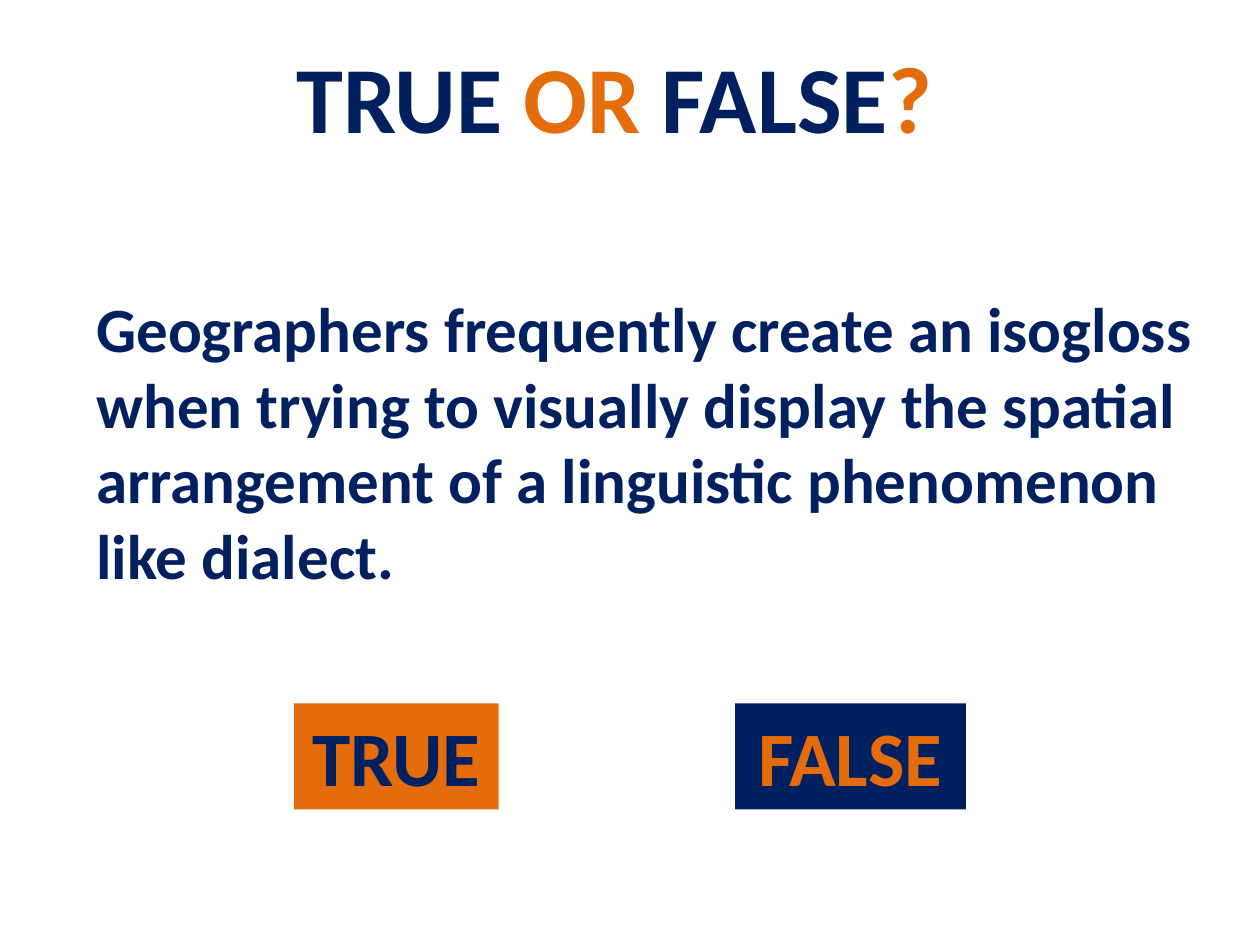
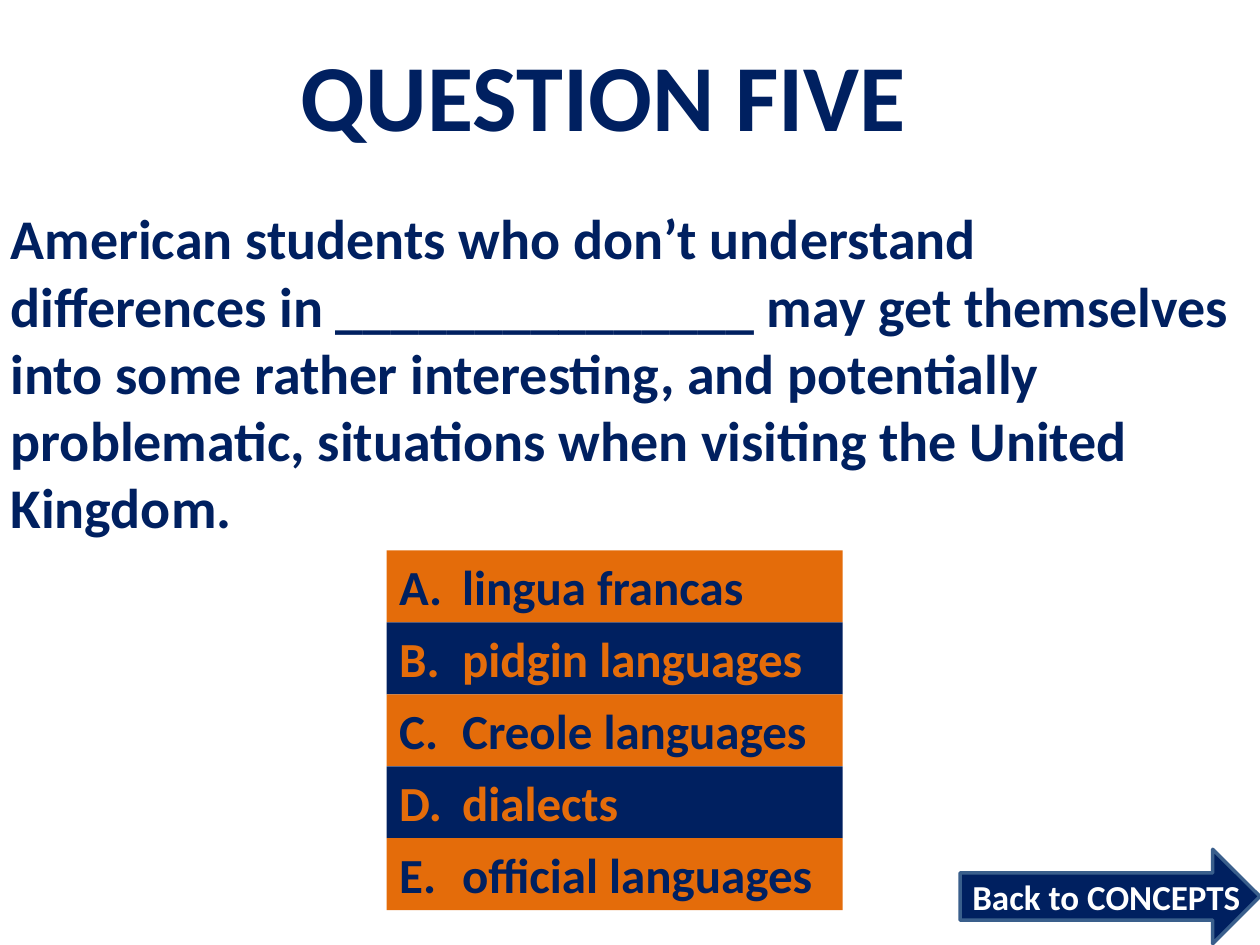
from pptx import Presentation
from pptx.dml.color import RGBColor
from pptx.enum.shapes import MSO_SHAPE
from pptx.enum.text import MSO_ANCHOR, PP_ALIGN
from pptx.util import Pt

RECTANGLE = MSO_SHAPE.RECTANGLE
SNIPPED_RECTANGLE = MSO_SHAPE.SNIP_2_SAME_RECTANGLE
RIGHT_ARROW = MSO_SHAPE.RIGHT_ARROW
LEFT, CENTER = PP_ALIGN.LEFT, PP_ALIGN.CENTER
TOP = MSO_ANCHOR.TOP

NAVY = RGBColor(0x00, 0x20, 0x60)
ORANGE = RGBColor(0xE4, 0x6C, 0x0A)
STEEL = RGBColor(0x3A, 0x5F, 0x8C)
WHITE = RGBColor(0xFF, 0xFF, 0xFF)
FONT = "Calibri"

ANSWERS = ["lingua francas", "pidgin languages", "Creole languages",
           "dialects", "official languages"]
ANSWER_LEFT, ANSWER_TOP = 221, 314.6
ANSWER_WIDTH, ANSWER_HEIGHT = 260.6, 41.1
ANSWER_INDENT = 36


def write(shape, runs, size, align=LEFT):
    """Fill a shape with one bold paragraph of (text, colour) runs."""
    frame = shape.text_frame
    frame.word_wrap = True
    frame.vertical_anchor = TOP
    paragraph = frame.paragraphs[0]
    paragraph.alignment = align
    for text, color in runs:
        run = paragraph.add_run()
        run.text = text
        run.font.name = FONT
        run.font.size = Pt(size)
        run.font.bold = True
        run.font.color.rgb = color
    return paragraph


def add_shape(slide, kind, box, fill=None):
    shape = slide.shapes.add_shape(kind, *map(Pt, box))
    shape.shadow.inherit = False
    shape.line.fill.background()
    if fill is None:
        shape.fill.background()
    else:
        shape.fill.solid()
        shape.fill.fore_color.rgb = fill
    return shape


def add_title(slide, box, runs):
    write(add_shape(slide, SNIPPED_RECTANGLE, box), runs, 54, CENTER)


def add_text(slide, box, text, size, color=NAVY):
    write(slide.shapes.add_textbox(*map(Pt, box)), [(text, color)], size)


def add_button(slide, box, text, fill, color):
    write(add_shape(slide, RECTANGLE, box, fill), [(text, color)], 44, CENTER)


def add_answers(slide):
    """Stack the lettered answers in alternating colours."""
    for row, answer in enumerate(ANSWERS):
        fill, color = (NAVY, ORANGE) if row % 2 else (ORANGE, NAVY)
        box = (ANSWER_LEFT, ANSWER_TOP + row * ANSWER_HEIGHT,
               ANSWER_WIDTH, ANSWER_HEIGHT)
        line = write(add_shape(slide, RECTANGLE, box, fill),
                     [(f"{'ABCDE'[row]}.\t{answer}", color)], 28)
        properties = line._p.get_or_add_pPr()
        properties.set("marL", str(Pt(ANSWER_INDENT)))
        properties.set("indent", str(-Pt(ANSWER_INDENT)))


def add_back_arrow(slide):
    arrow = add_shape(slide, RIGHT_ARROW, (548.6, 485.3, 171.4, 54), NAVY)
    arrow.line.color.rgb = STEEL
    arrow.line.width = Pt(2)
    add_text(slide, (548.6, 496.8, 177, 31.5), "Back to CONCEPTS", 20, WHITE)


def build_true_or_false(slide):
    add_text(slide, (48, 162, 642, 181.5),
             "Geographers frequently create an isogloss when trying to "
             "visually display the spatial arrangement of a linguistic "
             "phenomenon like dialect.", 36)
    add_title(slide, (150, 12, 402, 79),
              [("TRUE ", NAVY), ("OR ", ORANGE), ("FALSE", NAVY), ("?", ORANGE)])
    add_button(slide, (168, 402, 117, 60.5), "TRUE", ORANGE, NAVY)
    add_button(slide, (420, 402, 132, 60.5), "FALSE", NAVY, ORANGE)


def build_question_five(slide):
    add_title(slide, (126, 11, 438, 79), [("QUESTION FIVE", NAVY)])
    add_text(slide, (-1, 113, 720, 201),
             "American students who don’t understand differences in "
             "_______________ may get themselves into some rather "
             "interesting, and potentially problematic, situations when "
             "visiting the United Kingdom.", 32)
    add_answers(slide)
    add_back_arrow(slide)


def main():
    deck = Presentation()
    deck.slide_width, deck.slide_height = Pt(720), Pt(540)
    blank = deck.slide_layouts[6]
    for build in (build_true_or_false, build_question_five):
        build(deck.slides.add_slide(blank))
    deck.save("out.pptx")


if __name__ == "__main__":
    main()
